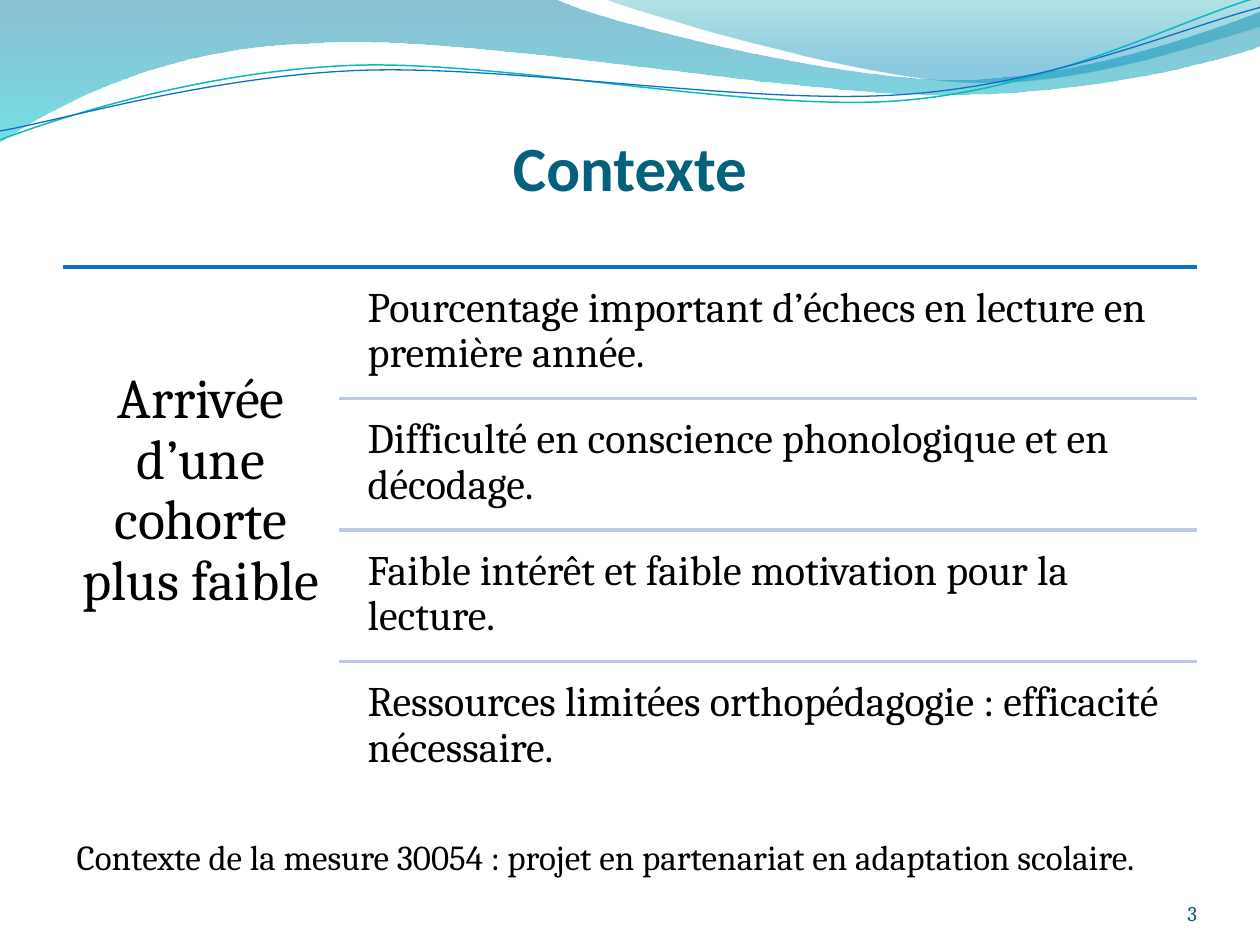
from math import cos, radians, sin

from lxml import etree
from pptx import Presentation
from pptx.dml.color import RGBColor
from pptx.enum.shapes import MSO_CONNECTOR
from pptx.enum.text import MSO_ANCHOR, PP_ALIGN
from pptx.oxml.ns import qn
from pptx.util import Inches, Pt

STRAIGHT = MSO_CONNECTOR.STRAIGHT
LEFT, CENTER, RIGHT = PP_ALIGN.LEFT, PP_ALIGN.CENTER, PP_ALIGN.RIGHT
TOP, BOTTOM = MSO_ANCHOR.TOP, MSO_ANCHOR.BOTTOM

BLACK = RGBColor(0x00, 0x00, 0x00)
BLUE = RGBColor(0x0F, 0x6F, 0xC6)
PALE = RGBColor(0xBD, 0xC8, 0xE5)
TEAL = RGBColor(0x0A, 0xB8, 0xBF)
TITLE = RGBColor(0x04, 0x61, 0x7B)
NUMBER = RGBColor(0x04, 0x5D, 0x75)
DEEP = RGBColor(0x00, 0x74, 0xA1)
CYAN = RGBColor(0x00, 0xC6, 0xCF)
SEA = RGBColor(0x00, 0xA1, 0xA9)
SKY = RGBColor(0x00, 0x8B, 0xBF)

TILT = 2.7
ROW_TOP, ROW_GAP = 2.17, 3.13 / 3

WAVES = [
    ([(0, 0), (4.4, -0.01),
      (4.76, 0.17, 6.64, 0.63, 7.58, 0.63), (8.53, 0.63, 9.58, 0.26, 10, 0.09),
      (10.01, 0.36),
      (9.83, 0.44, 8.7, 0.76, 7.46, 0.75), (6.22, 0.75, 3.82, 0.28, 2.57, 0.34),
      (1.29, 0.36, 0.46, 0.83, -0.01, 1.13), (0, 0)],
     [(0, DEEP, 45), (1, CYAN, 55)]),
    ([(4.79, -0.01),
      (5.09, 0.11, 6.82, 0.62, 7.69, 0.65), (8.56, 0.69, 9.61, 0.32, 10, 0.21),
      (10, 0), (4.79, -0.01)],
     [(0, SEA, 30), (0.8, SKY, 45)]),
]
CURVES = [
    ([(0, 1.11), (0.48, 0.93, 1.58, 0.57, 2.77, 0.52),
      (3.95, 0.47, 5.93, 0.89, 7.13, 0.8), (8.33, 0.71, 9.38, 0.15, 9.98, -0.02)],
     (4.99, 0.58), TEAL, 0.85),
    ([(0, 1.04), (0.47, 0.96, 1.64, 0.61, 2.83, 0.56),
      (4.03, 0.51, 5.97, 0.84, 7.17, 0.75), (8.36, 0.67, 9.41, 0.21, 10, 0.06)],
     (5, 0.59), BLUE, 0.75),
]
ROWS = [
    "Pourcentage important d’échecs en lecture en première année.",
    "Difficulté en conscience phonologique et en décodage.",
    "Faible intérêt et faible motivation pour la lecture.",
    "Ressources limitées orthopédagogie : efficacité nécessaire.",
]


def pairs(part):
    """Split flat coordinates into points."""
    return list(zip(part[::2], part[1::2]))


def turn(part, pivot):
    """Turn the points of a part clockwise by the tilt."""
    wide, high = cos(radians(TILT)), sin(radians(TILT))
    flat = []
    for x, y in pairs(part):
        across, down = x - pivot[0], y - pivot[1]
        flat += [pivot[0] + across * wide - down * high,
                 pivot[1] + across * high + down * wide]
    return flat


def add_path(slide, parts, close):
    """Add an outline made of points and cubic curves."""
    places = [tuple(map(Inches, part[-2:])) for part in parts]
    pen = slide.shapes.build_freeform(*places[0])
    pen.add_line_segments(places[1:], close=close)
    shape = pen.convert_to_shape()
    shape.shadow.inherit = False
    for line, part in zip(shape._element.xpath(".//a:lnTo"), parts[1:]):
        if len(part) == 2:
            continue
        curve = etree.Element(qn("a:cubicBezTo"))
        for x, y in pairs(part):
            knot = etree.SubElement(curve, qn("a:pt"))
            knot.set("x", str(Inches(x) - shape.left))
            knot.set("y", str(Inches(y) - shape.top))
        line.getparent().replace(line, curve)
    return shape


def add_wave(slide, parts, stops):
    """Add a wave filled with a translucent vertical gradient."""
    shape = add_path(slide, parts, True)
    shape.line.fill.background()
    shape.fill.gradient()
    shape.fill.gradient_angle = 270
    for stop, (place, color, _) in zip(shape.fill.gradient_stops, stops):
        stop.position = place
        stop.color.rgb = color
    tints = shape._element.xpath(".//a:gs/a:srgbClr")
    for tint, (_, _, alpha) in zip(tints, stops):
        etree.SubElement(tint, qn("a:alpha")).set("val", str(alpha * 1000))


def add_curve(slide, parts, pivot, color, width):
    """Add an open curved line, tilted about its pivot."""
    shape = add_path(slide, [turn(part, pivot) for part in parts], False)
    shape.rotation = 360 - TILT
    shape.fill.background()
    shape.line.color.rgb = color
    shape.line.width = Pt(width)


def add_rule(slide, left, top, color):
    """Add a horizontal rule up to the right margin."""
    rule = slide.shapes.add_connector(
        STRAIGHT, Inches(left), Inches(top), Inches(9.5), Inches(top))
    rule.line.color.rgb = color
    rule.line.width = Pt(2)
    etree.SubElement(rule._element.spPr, qn("a:effectLst"))


def add_text(slide, text, box, size, insets, color=BLACK, name="Cambria",
             align=LEFT, anchor=TOP, bold=False, spacing=1.0, wrap=True):
    """Add a text box with one formatted paragraph."""
    frame = slide.shapes.add_textbox(*map(Inches, box)).text_frame
    sides = ("margin_left", "margin_top", "margin_right", "margin_bottom")
    layout = dict(zip(sides, map(Inches, insets)))
    layout.update(word_wrap=wrap, vertical_anchor=anchor)
    para = frame.paragraphs[0]
    run = para.add_run()
    run.text = text
    run.font.color.rgb = color
    formats = [
        (frame, layout),
        (para, {"alignment": align, "line_spacing": spacing}),
        (run.font, {"size": Pt(size), "name": name, "bold": bold}),
    ]
    for target, values in formats:
        for key, value in values.items():
            setattr(target, key, value)


def add_rows(slide):
    """Add the list of findings with rules between them."""
    for index, text in enumerate(ROWS):
        top = ROW_TOP + index * ROW_GAP
        add_text(slide, text, (2.82, top, 6.68, 1), 24, [0.1] * 4, spacing=0.9)
        if index:
            add_rule(slide, 2.69, top - 0.05, PALE)


def main():
    """Build the slide and save it."""
    deck = Presentation()
    deck.slide_width, deck.slide_height = Inches(10), Inches(7.5)
    slide = deck.slides.add_slide(deck.slide_layouts[6])
    for wave in WAVES:
        add_wave(slide, *wave)
    for curve in CURVES:
        add_curve(slide, *curve)
    add_text(slide, "Contexte", (0.5, 0.77, 9, 0.85), 36, (0, 0.05, 0, 0),
             TITLE, "Calibri", CENTER, BOTTOM, bold=True)
    add_rule(slide, 0.5, 2.12, BLUE)
    add_text(slide, "Arrivée d’une cohorte plus faible", (0.5, 2.12, 2.19, 4.23),
             32, (0.13, 0.82, 0.13, 0.13), align=CENTER, spacing=0.9)
    add_rows(slide)
    add_text(slide, "Contexte de la mesure 30054 : projet en partenariat en "
             "adaptation scolaire.", (0.51, 6.58, 9.11, 0.44), 20,
             (0.1, 0.05, 0.1, 0.05), wrap=False)
    add_text(slide, "3", (8.67, 6.95, 0.83, 0.4), 12, [0] * 4, NUMBER,
             align=RIGHT, anchor=BOTTOM)
    deck.save("out.pptx")


if __name__ == "__main__":
    main()
